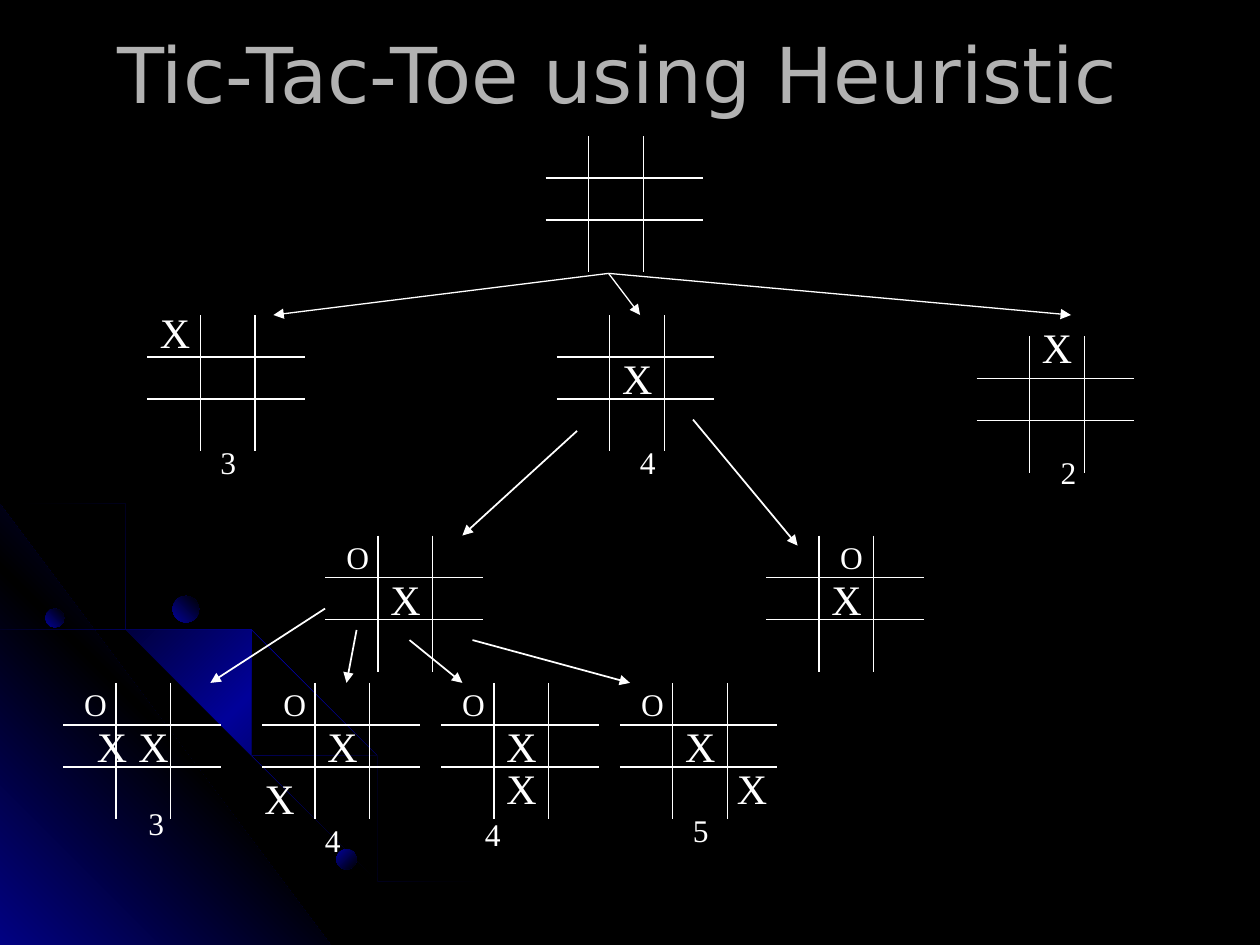
from dataclasses import dataclass

from lxml import etree
from pptx import Presentation
from pptx.dml.color import RGBColor
from pptx.enum.shapes import MSO_CONNECTOR, MSO_SHAPE
from pptx.enum.text import MSO_ANCHOR, MSO_AUTO_SIZE, PP_ALIGN
from pptx.oxml.ns import qn
from pptx.util import Inches, Pt

STRAIGHT, OVAL = MSO_CONNECTOR.STRAIGHT, MSO_SHAPE.OVAL
MIDDLE, CENTER = MSO_ANCHOR.MIDDLE, PP_ALIGN.CENTER
GROW, FIXED = MSO_AUTO_SIZE.SHAPE_TO_FIT_TEXT, MSO_AUTO_SIZE.NONE
TITLE_ONLY = 5


@dataclass(frozen=True)
class Theme:
    black: str = "000000"
    blue: str = "010199"
    white: str = "FFFFFF"
    grey: str = "B2B2B2"
    title_font: str = "DejaVu Sans"
    mark_font: str = "Times New Roman"
    title_size: int = 44
    grid_line: float = 0.75
    move_line: float = 1


T = Theme()
TITLE = "Tic-Tac-Toe using Heuristic "

# Board geometry, measured from the board's top left corner
BOARD_W, BOARD_H = 1.25, 1.08
ROW_H = 1 / 3
FIRST_COL, COL_W = 0.42, 0.435

# symbol: (type size, box width, box height)
BIG, SMALL, DIGIT = (24, 0.44, 0.5), (18, 0.4, 0.4), (18, 0.32, 0.4)
STYLES = {"X": BIG, "O": SMALL}

CENTER_X = ("X", 0.42, 0.25)
CORNER_O = ("O", 0.07, -0.03)

# left, top, first column width, marks as (text, dx, dy) from the board's corner
BOARDS = [
    (4.33, 1.08, 0.34, []),
    (1.17, 2.5, FIRST_COL, [("X", 0, -0.12), ("3", 0.48, 0.97)]),
    (4.42, 2.5, FIRST_COL, [CENTER_X, ("4", 0.56, 0.97)]),
    (7.75, 2.67, FIRST_COL, [("X", 0.42, -0.17), ("2", 0.57, 0.88)]),
    (2.58, 4.25, FIRST_COL, [CENTER_X, CORNER_O]),
    (6.08, 4.25, FIRST_COL, [CENTER_X, ("O", 0.49, -0.03)]),
    (0.5, 5.42, FIRST_COL, [("X", 0.5, 0.25), CORNER_O, ("X", 0.17, 0.25), ("3", 0.58, 0.91)]),
    (2.08, 5.42, FIRST_COL, [CENTER_X, CORNER_O, ("X", -0.08, 0.66), ("4", 0.4, 1.05)]),
    (3.5, 5.42, FIRST_COL, [CENTER_X, CORNER_O, ("X", 0.42, 0.58), ("4", 0.25, 1)]),
    (4.92, 5.42, FIRST_COL, [CENTER_X, CORNER_O, ("X", 0.83, 0.58), ("5", 0.48, 0.97)]),
]

ROOT_EXIT = (4.83, 2.17)
FIRST_MOVES = [(ROOT_EXIT, (x, 2.5)) for x in (2.17, 5.08, 8.5)]
LATER_MOVES = [
    ((4.58, 3.42), (3.67, 4.25)), ((5.5, 3.33), (6.33, 4.33)),
    ((2.58, 4.83), (1.67, 5.42)), ((2.83, 5), (2.75, 5.42)),
    ((3.25, 5.08), (3.67, 5.42)), ((3.75, 5.08), (5, 5.42)),
]

# Backdrop
OUTER_ARC = [
    (0.57, 4.47), (0.28, 4.41), (0, 4.35), (0, 4.38), (0.28, 4.43), (0.56, 4.49),
    (0.97, 4.61), (1.35, 4.78), (1.73, 4.99), (2.08, 5.23), (2.41, 5.49), (2.71, 5.79),
    (2.98, 6.12), (3.23, 6.49), (3.37, 6.73), (3.5, 6.98), (3.6, 7.23), (3.7, 7.49),
    (3.72, 7.49), (3.62, 7.23), (3.52, 6.98), (3.39, 6.73), (3.25, 6.48), (3, 6.11),
    (2.72, 5.78), (2.42, 5.48), (2.09, 5.21), (1.74, 4.97), (1.36, 4.77), (0.98, 4.59),
]
CORNER = [(3.22, 7.5), (0, 7.5), (0, 4.27)]
INNER_ARC = [
    (2.85, 7.14), (2.94, 7.32), (3.01, 7.49), (3.03, 7.49), (2.96, 7.3), (2.86, 7.12),
    (2.66, 6.76), (2.42, 6.4), (2.15, 6.06), (1.84, 5.76), (1.52, 5.49), (1.17, 5.26),
    (0.79, 5.05), (0.41, 4.88), (0, 4.75), (0, 4.77), (0.39, 4.9), (0.77, 5.07),
    (1.15, 5.28), (1.5, 5.51), (1.83, 5.78), (2.13, 6.08), (2.4, 6.41), (2.65, 6.77),
]
MIDDLE_ARC = [
    (0, 4.42), (0, 4.44), (0.36, 4.57), (0.74, 4.75), (1.09, 4.94), (1.42, 5.18),
    (1.73, 5.44), (2.02, 5.75), (2.27, 6.05), (2.52, 6.41), (2.67, 6.67), (2.8, 6.94),
    (2.92, 7.22), (3.01, 7.49), (3.03, 7.49), (2.94, 7.2), (2.82, 6.93), (2.69, 6.65),
    (2.54, 6.39), (2.29, 6.03), (2.04, 5.73), (1.75, 5.43), (1.44, 5.16), (1.11, 4.93),
    (0.76, 4.73), (0.39, 4.55),
]
GLOW = (T.black, T.blue, T.black)
OUTLINES = [
    (OUTER_ARC, GLOW, 45),
    (CORNER, (T.blue, T.black, T.blue), 315),
    (INNER_ARC, GLOW, 45),
    (MIDDLE_ARC, GLOW, 45),
]
# left, top, diameter, gradient angle
PLANETS = [(0.36, 4.83, 0.15, 315), (2.67, 6.74, 0.16, 45), (1.37, 4.73, 0.21, 315)]


def paint_gradient(sp, colors, angle):
    """Fill with evenly spaced stops; the angle runs clockwise in degrees."""
    sp.shadow.inherit = False
    sp.line.fill.background()
    sp.fill.gradient()
    grad = sp._element.spPr.find(qn("a:gradFill"))
    for child in list(grad):
        grad.remove(child)
    stops = etree.SubElement(grad, qn("a:gsLst"))
    for i, color in enumerate(colors):
        stop = etree.SubElement(stops, qn("a:gs"), pos=str(i * 100000 // (len(colors) - 1)))
        etree.SubElement(stop, qn("a:srgbClr"), val=color)
    etree.SubElement(grad, qn("a:lin"), ang=str(angle * 60000), scaled="1")


def add_line(shapes, start, end, width=T.grid_line, arrow=False):
    line = shapes.add_connector(STRAIGHT, *map(Inches, (*start, *end)))
    line.line.color.rgb = RGBColor.from_string(T.white)
    line.line.width = Pt(width)
    if arrow:
        etree.SubElement(line.line._get_or_add_ln(), qn("a:tailEnd"), type="triangle")
    etree.SubElement(line._element.spPr, qn("a:effectLst"))


def add_run(p, text, font, size, color):
    r = p.add_run()
    r.text = text
    r.font.name, r.font.size = font, Pt(size)
    r.font.color.rgb = RGBColor.from_string(color)


def add_mark(shapes, text, x, y):
    size, w, h = STYLES.get(text, DIGIT)
    tf = shapes.add_textbox(*map(Inches, (x, y, w, h))).text_frame
    tf.word_wrap = False
    tf.auto_size = GROW
    add_run(tf.paragraphs[0], text, T.mark_font, size, T.white)


def add_board(shapes, x, y, first_col, marks):
    for i in range(2):
        col, row = x + first_col + i * COL_W, y + (i + 1) * ROW_H
        add_line(shapes, (col, y), (col, y + BOARD_H))
        add_line(shapes, (x, row), (x + BOARD_W, row))
    for text, dx, dy in marks:
        add_mark(shapes, text, x + dx, y + dy)


def add_backdrop(shapes):
    for points, colors, angle in OUTLINES:
        outline = shapes.build_freeform(*points[0], scale=float(Inches(1)))
        outline.add_line_segments(points[1:], close=True)
        paint_gradient(outline.convert_to_shape(), colors, angle)
    for x, y, d, angle in PLANETS:
        planet = shapes.add_shape(OVAL, *map(Inches, (x, y, d, d)))
        paint_gradient(planet, (T.blue, T.black), angle)


def set_title(title):
    title.left, title.top, title.width, title.height = map(Inches, (0.5, 0.08, 9, 1))
    tf = title.text_frame
    tf.word_wrap, tf.auto_size, tf.vertical_anchor = True, FIXED, MIDDLE
    p = tf.paragraphs[0]
    p.alignment = CENTER
    add_run(p, TITLE, T.title_font, T.title_size, T.grey)


def main():
    prs = Presentation()
    prs.slide_width, prs.slide_height = Inches(10), Inches(7.5)
    slide = prs.slides.add_slide(prs.slide_layouts[TITLE_ONLY])
    fill = slide.background.fill
    fill.solid()
    fill.fore_color.rgb = RGBColor.from_string(T.black)

    shapes = slide.shapes
    add_backdrop(shapes)
    set_title(shapes.title)
    for board in BOARDS:
        add_board(shapes, *board)
    for moves, width in ((FIRST_MOVES, T.grid_line), (LATER_MOVES, T.move_line)):
        for start, end in moves:
            add_line(shapes, start, end, width, arrow=True)
    prs.save("out.pptx")


if __name__ == "__main__":
    main()
